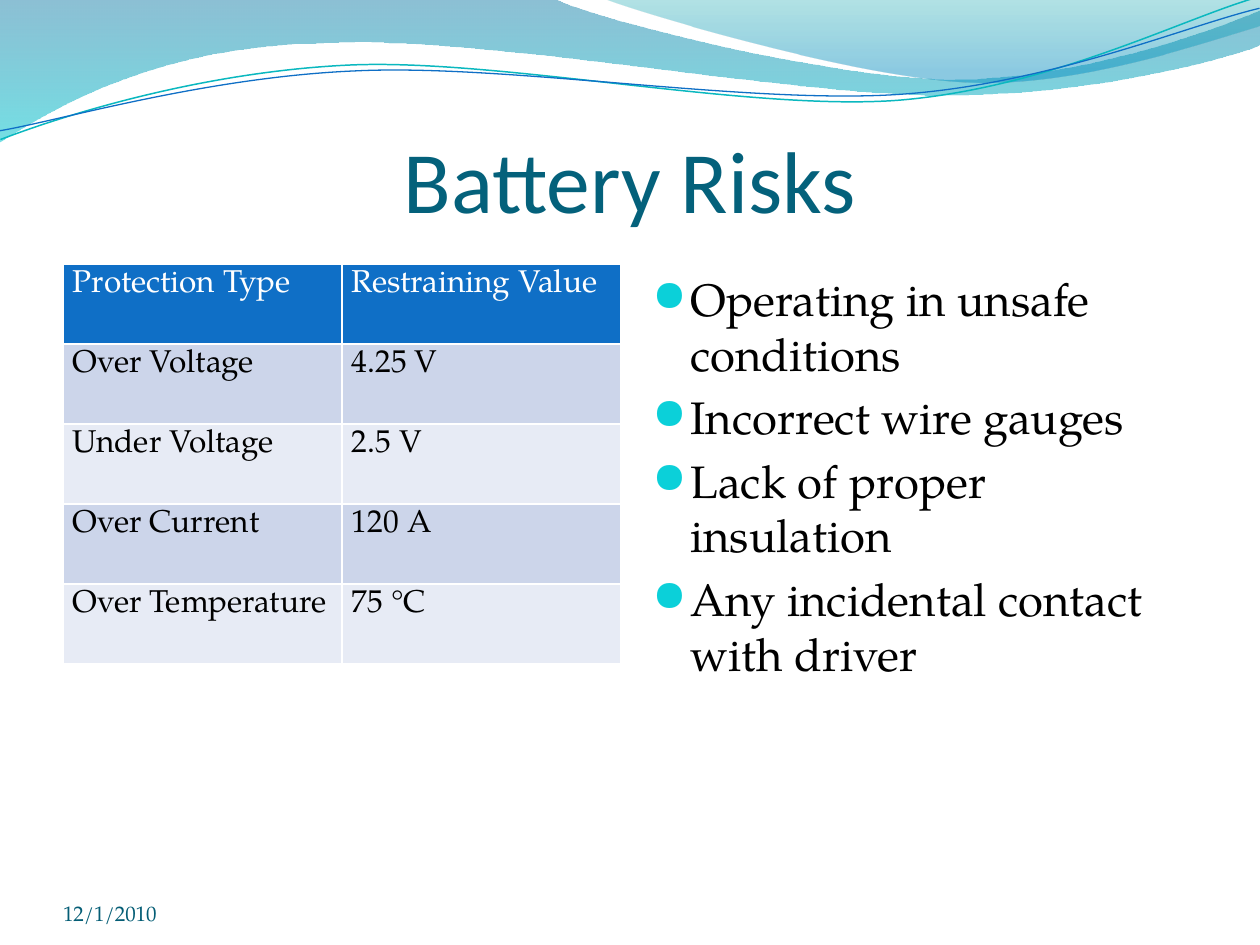
from typing import NamedTuple

from lxml import etree
from pptx import Presentation
from pptx import util as u
from pptx.dml.color import RGBColor
from pptx.enum import text
from pptx.oxml.ns import qn

SCALE = 914400 / 126
BODY_FONT = "TeX Gyre Pagella"
COLORS = {
    "title": "04617B", "date": "045D75", "black": "000000", "white": "FFFFFF",
    "header": "0F6FC6", "odd_row": "CCD5EA", "even_row": "E7EBF5",
    "bullet": "0BD0D9", "teal_line": "0AB8BF", "blue_line": "0F6FC6",
    "band_top": "0074A1", "band_bottom": "00C6CF",
    "crest_top": "00A1A9", "crest_bottom": "008BBF",
}


class Stop(NamedTuple):
    position: float
    color: str
    opacity: int


class Wave(NamedTuple):
    start: tuple
    segments: list
    stops: tuple = ()
    line: str = ""
    weight: float = 0
    rotation: float = 0


class Label(NamedTuple):
    box: tuple
    lines: list
    font: dict
    frame: dict
    paragraph: dict = {}
    bullet: str = ""


WAVES = [
    Wave((0, 0), [
        [(554, -1)],
        [(600, 21), (837, 79), (955, 79)],
        [(1075, 79), (1207, 33), (1260, 11)],
        [(1261, 45)],
        [(1239, 55), (1096, 96), (940, 95)],
        [(784, 95), (481, 35), (324, 43)],
        [(163, 45), (58, 105), (-1, 142)],
        [(0, 0)],
    ], (Stop(0, "band_top", 45), Stop(1, "band_bottom", 55))),
    Wave((604, -1), [
        [(641, 14), (859, 78), (969, 82)],
        [(1079, 87), (1211, 40), (1260, 26)],
        [(1260, 0)],
        [(604, -1)],
    ], (Stop(0, "crest_top", 30), Stop(0.8, "crest_bottom", 45))),
    Wave((-2, 110), [
        [(58, 90), (199, 52), (349, 52)],
        [(499, 52), (745, 117), (896, 113)],
        [(1048, 108), (1184, 45), (1260, 27)],
    ], line="teal_line", weight=0.85, rotation=357.3),
    Wave((-2, 101), [
        [(57, 94), (207, 57), (357, 58)],
        [(508, 58), (750, 111), (902, 107)],
        [(1052, 103), (1188, 52), (1262, 38)],
    ], line="blue_line", weight=0.75, rotation=357.3),
]

ROWS = [
    ("Protection Type", "Restraining Value"),
    ("Over Voltage", "4.25 V"),
    ("Under Voltage", "2.5 V"),
    ("Over Current", "120 A"),
    ("Over Temperature", "75 °C"),
]


def px(value: int) -> u.Emu:
    return u.Emu(round(value * SCALE))


LABELS = [
    Label((63, 97, 1134, 157), ["Battery Risks"],
          {"name": "Calibri", "size": u.Pt(50), "color": "title"},
          {"vertical_anchor": text.MSO_ANCHOR.MIDDLE, "margin_left": 0,
           "margin_right": 0, "margin_top": px(6), "margin_bottom": 0},
          {"alignment": text.PP_ALIGN.CENTER}),
    Label((640, 265, 557, 611),
          ["Operating in unsafe conditions", "Incorrect wire gauges",
           "Lack of proper insulation", "Any incidental contact with driver"],
          {"name": BODY_FONT, "size": u.Pt(26), "color": "black"},
          {"margin_top": px(6)}, {"space_before": u.Pt(5.2)}, "●"),
    Label((63, 876, 294, 50), ["12/1/2010"],
          {"name": BODY_FONT, "size": u.Pt(12), "color": "date"},
          {"vertical_anchor": text.MSO_ANCHOR.BOTTOM, "margin_left": 0,
           "margin_right": 0, "margin_top": 0, "margin_bottom": 0}),
]


def rgb(name: str) -> RGBColor:
    return RGBColor.from_string(COLORS[name])


def apply(target, values: dict) -> None:
    for name, value in values.items():
        if name == "color":
            target.color.rgb = rgb(value)
        else:
            setattr(target, name, value)


def child(parent, tag: str, **attributes):
    return etree.SubElement(parent, qn(tag), attributes)


def bend_segments(shape, segments: list) -> None:
    straight = iter(list(shape._element.iter(qn("a:lnTo"))))
    for segment in segments:
        pieces = [next(straight) for _ in segment]
        if len(pieces) == 3:
            curve = pieces[0].makeelement(qn("a:cubicBezTo"), {})
            pieces[0].addprevious(curve)
            for piece in pieces:
                curve.append(piece[0])
                piece.getparent().remove(piece)


def draw_wave(slide, wave: Wave) -> None:
    builder = slide.shapes.build_freeform(*map(px, wave.start))
    for segment in wave.segments:
        builder.add_line_segments([tuple(map(px, point)) for point in segment], close=False)
    if wave.stops:
        builder.add_line_segments([], close=True)
    shape = builder.convert_to_shape()
    bend_segments(shape, wave.segments)
    shape.shadow.inherit = False
    if not wave.stops:
        shape.rotation = wave.rotation
        shape.fill.background()
        shape.line.color.rgb = rgb(wave.line)
        shape.line.width = u.Pt(wave.weight)
        return
    shape.line.fill.background()
    shape.fill.gradient()
    shape.fill.gradient_angle = 270
    for target, stop in zip(shape.fill.gradient_stops, wave.stops):
        target.position = stop.position
        target.color.rgb = rgb(stop.color)
    for element, stop in zip(shape._element.iter(qn("a:gs")), wave.stops):
        child(element[0], "a:alpha", val=str(stop.opacity * 1000))


def add_bullet(paragraph, symbol: str) -> None:
    properties = paragraph._p.get_or_add_pPr()
    properties.set("marL", str(px(38)))
    properties.set("indent", str(px(-38)))
    child(child(properties, "a:buClr"), "a:srgbClr", val=COLORS["bullet"])
    child(properties, "a:buSzPct", val="95000")
    child(properties, "a:buFont", typeface="OpenSymbol")
    child(properties, "a:buChar", char=symbol)


def draw_label(slide, label: Label) -> None:
    frame = slide.shapes.add_textbox(*map(px, label.box)).text_frame
    apply(frame, {"word_wrap": True, **label.frame})
    frame.text = "\n".join(label.lines)
    for index, paragraph in enumerate(frame.paragraphs):
        if label.bullet:
            add_bullet(paragraph, label.bullet)
        apply(paragraph, label.paragraph)
        if index == 0:
            paragraph.space_before = u.Pt(0)
        apply(paragraph.runs[0].font, label.font)


def add_borders(cell) -> None:
    properties = cell._tc.get_or_add_tcPr()
    for index, side in enumerate(("a:lnL", "a:lnR", "a:lnT", "a:lnB")):
        line = properties.makeelement(qn(side), {"w": str(u.Pt(1))})
        properties.insert(index, line)
        child(child(line, "a:solidFill"), "a:srgbClr", val=COLORS["white"])


def draw_table(slide, rows: list) -> None:
    column_width, row_height = 279, 80
    table = slide.shapes.add_table(len(rows), 2, px(63), px(264), px(2 * column_width),
                                   px(row_height * len(rows))).table
    for row_index, values in enumerate(rows):
        is_header = row_index == 0
        fill = "header" if is_header else "odd_row" if row_index % 2 else "even_row"
        for cell, value in zip(table.rows[row_index].cells, values):
            cell.text = value
            apply(cell, {"margin_left": px(10), "margin_right": px(10),
                         "margin_top": px(6), "margin_bottom": px(6)})
            cell.fill.solid()
            cell.fill.fore_color.rgb = rgb(fill)
            add_borders(cell)
            apply(cell.text_frame.paragraphs[0].runs[0].font,
                  {"name": BODY_FONT, "size": u.Pt(18), "bold": False,
                   "color": "white" if is_header else "black"})


def main() -> None:
    presentation = Presentation()
    presentation.slide_width, presentation.slide_height = px(1260), px(945)
    slide = presentation.slides.add_slide(presentation.slide_layouts[6])
    for wave in WAVES:
        draw_wave(slide, wave)
    draw_table(slide, ROWS)
    for label in LABELS:
        draw_label(slide, label)
    presentation.save("out.pptx")


if __name__ == "__main__":
    main()
